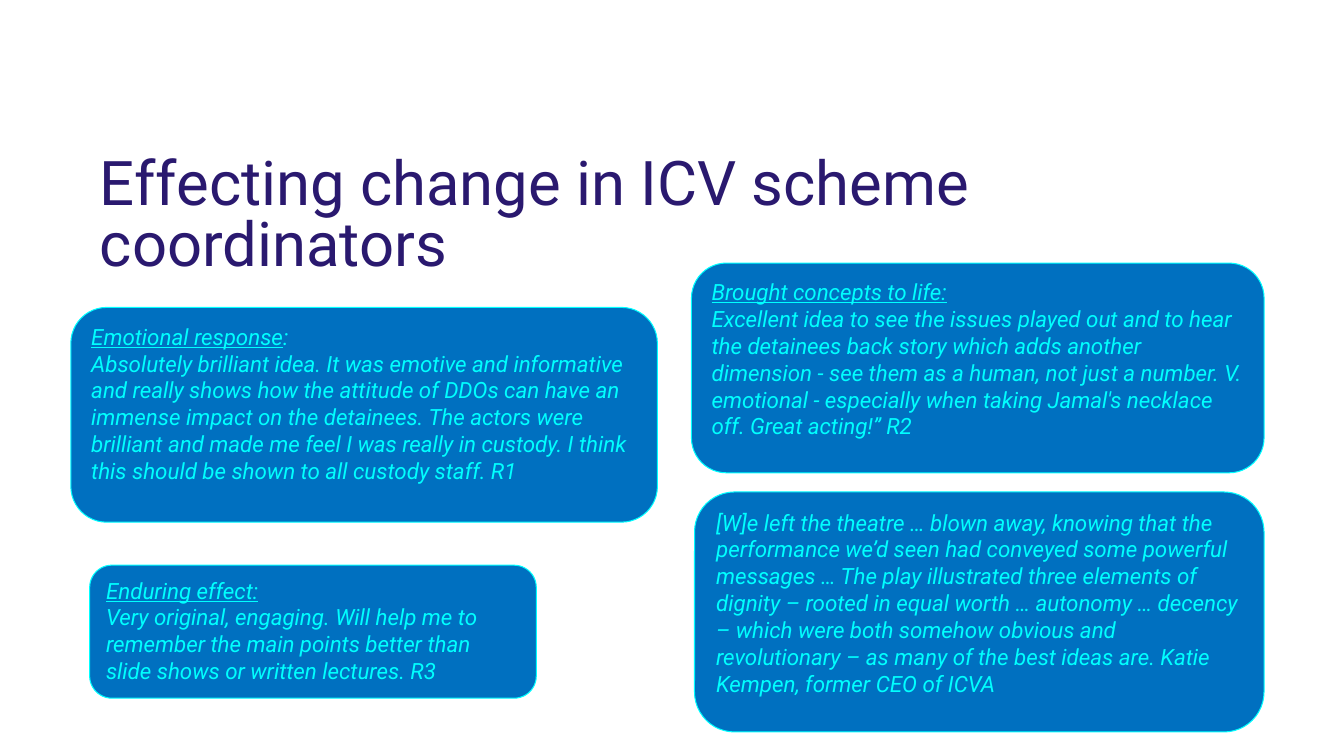
from dataclasses import dataclass

from pptx import Presentation
from pptx.dml.color import RGBColor
from pptx.enum import shapes, text
from pptx.util import Pt

FONT = "Roboto"
NAVY, BLUE, CYAN = "2A196F", "0070C0", "00FFFF"


@dataclass
class Quote:
    left: float
    top: float
    width: float
    height: float
    body: str
    heading: str = ""
    heading_end: str = ""  # closing mark that is not underlined


QUOTES = [
    Quote(50.6, 219.6, 419, 153.4,
          "Absolutely brilliant idea. It was emotive and informative and really shows "
          "how the attitude of DDOs can have an immense impact on the detainees. The "
          "actors were brilliant and made me feel I was really in custody. I think this "
          "should be shown to all custody staff. R1",
          "Emotional response", ":"),
    Quote(493.9, 187.9, 409, 149.8,
          "Excellent idea to see the issues played out and to hear the detainees back "
          "story which adds another dimension - see them as a human, not just a number. "
          "V. emotional - especially when taking Jamal's necklace off. Great acting!” R2",
          "Brought concepts to life:"),
    Quote(64.1, 403.7, 319, 95,
          "Very original, engaging. Will help me to remember the main points better than "
          "slide shows or written lectures. R3",
          "Enduring effect:"),
    Quote(496.1, 351.4, 406.8, 171.4,
          "[W]e left the theatre … blown away, knowing that the performance we’d seen had "
          "conveyed some powerful messages … The play illustrated three elements of "
          "dignity – rooted in equal worth … autonomy … decency – which were both somehow "
          "obvious and revolutionary – as many of the best ideas are. Katie Kempen, former "
          "CEO of ICVA"),
]


def color(value: str) -> RGBColor:
    return RGBColor.from_string(value)


def add_run(paragraph, content: str, ink: str, **formats) -> None:
    run = paragraph.add_run()
    run.text = content
    run.font.color.rgb = color(ink)
    for name, value in {"name": FONT, **formats}.items():
        setattr(run.font, name, value)


def format_frame(frame) -> None:
    formats = {
        "word_wrap": True,
        "auto_size": text.MSO_AUTO_SIZE.NONE,
        "vertical_anchor": text.MSO_ANCHOR.TOP,
        "margin_left": Pt(7.2),
        "margin_right": Pt(7.2),
        "margin_top": Pt(3.6),
    }
    for name, value in formats.items():
        setattr(frame, name, value)


def add_title(slide, content: str) -> None:
    title = slide.shapes.title
    position = {"left": 64.1, "top": 108, "width": 864, "height": 59.8}
    for name, value in position.items():
        setattr(title, name, Pt(value))
    format_frame(title.text_frame)
    paragraph = title.text_frame.paragraphs[0]
    paragraph.alignment = text.PP_ALIGN.LEFT
    paragraph.line_spacing = 0.83
    add_run(paragraph, content, NAVY, size=Pt(44))


def add_quote(slide, quote: Quote) -> None:
    shape = slide.shapes.add_shape(
        shapes.MSO_SHAPE.ROUNDED_RECTANGLE,
        Pt(quote.left), Pt(quote.top), Pt(quote.width), Pt(quote.height))
    shape.shadow.inherit = False
    shape.fill.solid()
    shape.fill.fore_color.rgb = color(BLUE)
    shape.line.color.rgb = color(CYAN)
    shape.line.width = Pt(0.75)

    frame = shape.text_frame
    format_frame(frame)
    paragraph = frame.paragraphs[0]
    formats = {"size": Pt(16), "italic": True}
    if quote.heading:
        add_run(paragraph, quote.heading, CYAN, underline=True, **formats)
        if quote.heading_end:
            add_run(paragraph, quote.heading_end, CYAN, **formats)
        paragraph = frame.add_paragraph()
    add_run(paragraph, quote.body, CYAN, **formats)
    for paragraph in frame.paragraphs:
        paragraph.alignment = text.PP_ALIGN.LEFT


def main() -> None:
    presentation = Presentation()
    presentation.slide_width = Pt(960)
    presentation.slide_height = Pt(540)
    slide = presentation.slides.add_slide(presentation.slide_layouts[5])
    add_title(slide, "Effecting change in ICV scheme coordinators")
    for quote in QUOTES:
        add_quote(slide, quote)
    presentation.save("out.pptx")


if __name__ == "__main__":
    main()
